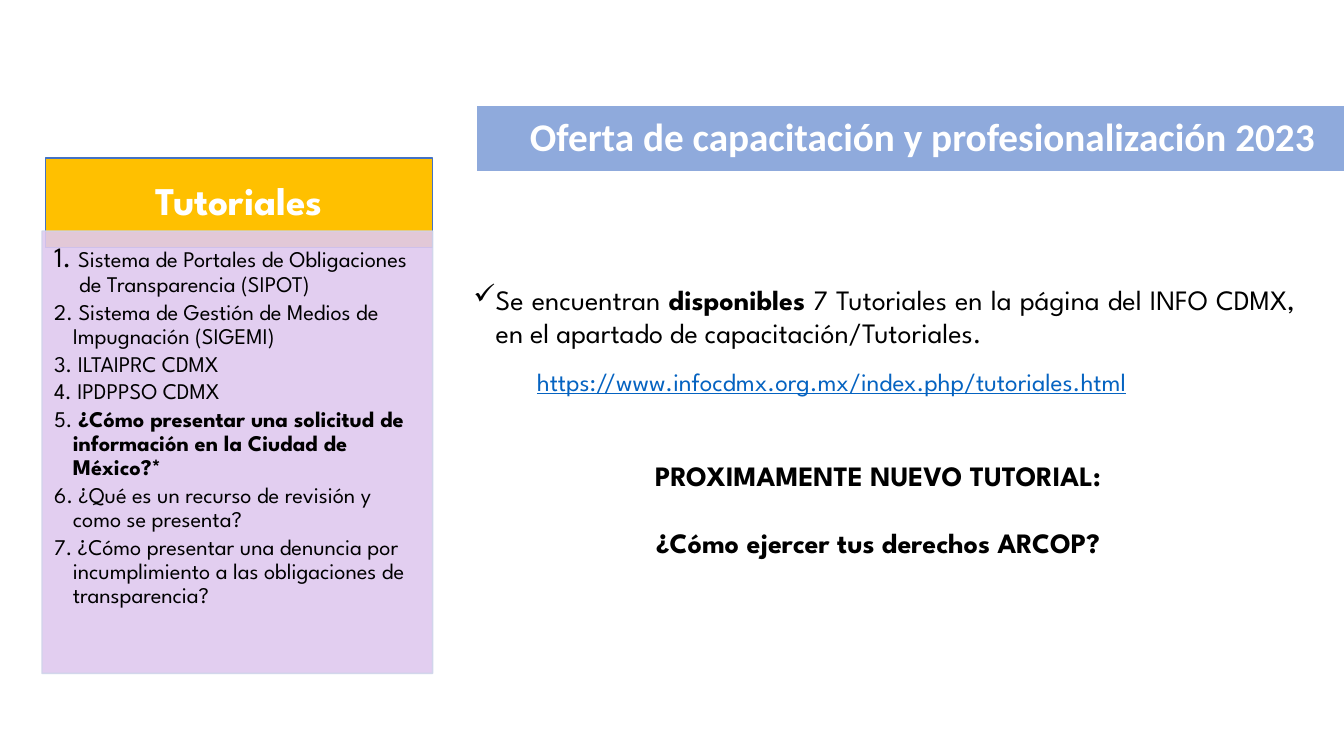
from pptx import Presentation
from pptx.dml.color import RGBColor
from pptx.enum.shapes import MSO_SHAPE
from pptx.enum.text import MSO_ANCHOR, MSO_AUTO_SIZE, PP_ALIGN
from pptx.oxml.ns import qn
from pptx.util import Pt
from lxml import etree

LEFT, CENTER, JUSTIFY = PP_ALIGN.LEFT, PP_ALIGN.CENTER, PP_ALIGN.JUSTIFY
TOP, MIDDLE = MSO_ANCHOR.TOP, MSO_ANCHOR.MIDDLE
NO_AUTOFIT = MSO_AUTO_SIZE.NONE
RECTANGLE = MSO_SHAPE.RECTANGLE

SPARTAN = "League Spartan"
BLACK, WHITE, LINK_BLUE = "000000", "FFFFFF", "0563C1"

# Each tutorial: number, text, number size, bold, indent
TUTORIALS = [
    ("1. ", "Sistema de Portales de Obligaciones de Transparencia (SIPOT)", 20, False, 18),
    ("2. ", "Sistema de Gestión de Medios de Impugnación (SIGEMI)", 16, False, 13.5),
    ("3. ", "ILTAIPRC CDMX", 16, False, 13.5),
    ("4. ", "IPDPPSO CDMX", 16, False, 13.5),
    ("5. ", "¿Cómo presentar una solicitud de información en la Ciudad de México?*",
     16, True, 13.5),
    ("6. ", "¿Qué es un recurso de revisión y como se presenta?", 16, False, 13.5),
    ("7. ", "¿Cómo presentar una denuncia por incumplimiento a las obligaciones "
     "de transparencia?", 16, False, 13.5),
]


def color(hex_string):
    return RGBColor.from_string(hex_string)


def place(box, left, top, width, height):
    box.left, box.top, box.width, box.height = Pt(left), Pt(top), Pt(width), Pt(height)


def paint(box, fill, line, opacity=100):
    box.fill.solid()
    box.fill.fore_color.rgb = color(fill)
    box.line.color.rgb = color(line)
    box.line.width = Pt(1)
    if opacity < 100:
        for node in box.element.spPr.iter(qn("a:srgbClr")):
            etree.SubElement(node, qn("a:alpha"), val=str(opacity * 1000))


def set_frame(box, anchor=TOP, insets=(7.2, 3.6, 7.2, 3.6)):
    frame = box.text_frame
    frame.word_wrap = True
    frame.auto_size = NO_AUTOFIT
    frame.vertical_anchor = anchor
    frame.margin_left, frame.margin_top, frame.margin_right, frame.margin_bottom = map(Pt, insets)
    return frame


def add_text_box(slide, left, top, width, height):
    return set_frame(slide.shapes.add_textbox(Pt(left), Pt(top), Pt(width), Pt(height)))


def format_para(para, align, margin=0, indent=0, bullet=None, spacing=1.0, before=0, after=0):
    properties = para._p.get_or_add_pPr()
    properties.set("marL", str(Pt(margin)))
    properties.set("indent", str(Pt(indent)))
    if bullet:
        etree.SubElement(properties, qn("a:buChar"), char=bullet)
    else:
        etree.SubElement(properties, qn("a:buNone"))
    para.alignment = align
    para.line_spacing = spacing
    para.space_before, para.space_after = Pt(before), Pt(after)


def add_span(para, text, size, bold=False, hex_string=BLACK, font=SPARTAN, underline=False):
    span = para.add_run()
    span.text = text
    span.font.name, span.font.size = font, Pt(size)
    span.font.bold, span.font.underline = bold, underline
    span.font.color.rgb = color(hex_string)


def add_title(slide):
    title = slide.shapes.title
    place(title, 340.5, 75, 621.5, 48)
    paint(title, "8FAADC", WHITE)
    para = set_frame(title, MIDDLE, (38, 6, 6, 6)).paragraphs[0]
    format_para(para, LEFT, spacing=0.9)
    add_span(para, "Oferta de capacitación y profesionalización 2023", 28, True, WHITE, "Calibri")


def add_list_header(slide):
    header = slide.shapes.add_shape(RECTANGLE, Pt(32.5), Pt(113), Pt(276.5), Pt(64))
    header.shadow.inherit = False
    paint(header, "FFC000", "4472C4")
    para = set_frame(header, MIDDLE, (16, 8.5, 16, 8.5)).paragraphs[0]
    format_para(para, CENTER, spacing=0.9)
    add_span(para, "Tutoriales", 28, True, WHITE)


def add_tutorial_list(slide):
    body = slide.placeholders[1]
    place(body, 30, 165, 279, 316)
    paint(body, "DFC9EF", "CFD5EA", 90)
    frame = set_frame(body, TOP, (8.6, 8.6, 11.5, 12))
    for index, (number, text, number_size, bold, indent) in enumerate(TUTORIALS):
        para = frame.add_paragraph() if index else frame.paragraphs[0]
        format_para(para, LEFT, indent, -indent, spacing=0.9, after=2.5)
        add_span(para, number, number_size)
        add_span(para, text, 16, bold)
    # The translucent panel overlaps the header from above
    body.element.getparent().append(body.element)


def add_availability(slide):
    para = add_text_box(slide, 311, 198, 621.5, 55.5).paragraphs[0]
    format_para(para, JUSTIFY, 36, -16, "✓")
    add_span(para, "Se encuentran ", 20)
    add_span(para, "disponibles", 20, True)
    add_span(para, " 7 Tutoriales en la página del INFO CDMX, "
                   "en el apartado de capacitación/Tutoriales.", 20)


def add_web_address(slide):
    para = add_text_box(slide, 340.5, 258, 664, 29).paragraphs[0]
    format_para(para, JUSTIFY, 36)
    add_span(para, "https://www.infocdmx.org.mx/index.php/tutoriales.html", 18,
             hex_string=LINK_BLUE, underline=True)


def add_announcement(slide):
    frame = add_text_box(slide, 398, 324, 422.5, 80)
    heading, topic = frame.paragraphs[0], frame.add_paragraph()
    format_para(heading, CENTER, 36)
    add_span(heading, "PROXIMAMENTE NUEVO TUTORIAL:", 20, True)
    format_para(topic, CENTER, 36, before=24)
    add_span(topic, "¿Cómo ejercer tus derechos ARCOP?", 20, True)


def main():
    deck = Presentation()
    deck.slide_width, deck.slide_height = Pt(960), Pt(540)
    page = deck.slides.add_slide(deck.slide_layouts[1])
    # Right side
    add_availability(page)
    add_announcement(page)
    add_title(page)
    add_web_address(page)
    # Left side
    add_list_header(page)
    add_tutorial_list(page)
    deck.save("out.pptx")


if __name__ == "__main__":
    main()
